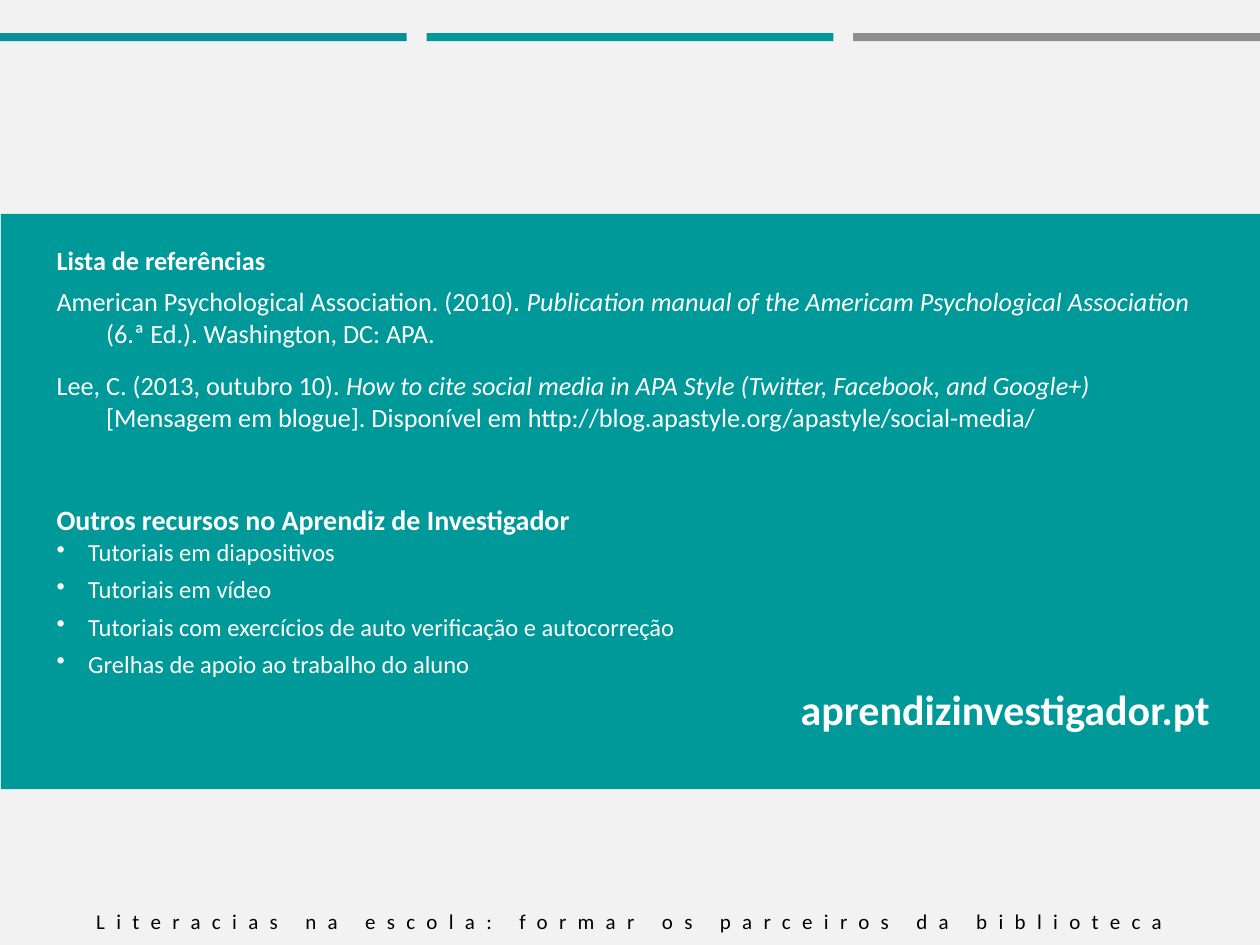
from dataclasses import dataclass

from lxml import etree
from pptx import Presentation
from pptx.dml.color import RGBColor
from pptx.enum.shapes import MSO_SHAPE
from pptx.enum.text import PP_ALIGN
from pptx.oxml.ns import qn
from pptx.util import Cm, Pt

RECTANGLE = MSO_SHAPE.RECTANGLE
CENTER, RIGHT = PP_ALIGN.CENTER, PP_ALIGN.RIGHT


@dataclass(frozen=True)
class Theme:
    """Colours, font and type sizes of the deck."""
    paper: str = "F2F2F2"
    teal: str = "009999"
    deep_teal: str = "089099"
    grey: str = "8E8E8E"
    white: str = "FFFFFF"
    black: str = "000000"
    font: str = "Calibri"
    footer: int = 12
    bullet: int = 14
    reference: int = 15
    heading: int = 16
    address: int = 24


THEME = Theme()
REFERENCES = [
    ("American Psychological Association. (2010). ",
     "Publication manual of the Americam Psychological Association",
     " (6.ª Ed.). Washington, DC: APA."),
    ("Lee, C. (2013, outubro 10). ",
     "How to cite social media in APA Style (Twitter, Facebook, and Google+) ",
     "[Mensagem em blogue]. Disponível em http://blog.apastyle.org/apastyle/social-media/"),
]
RESOURCES = [
    "Tutoriais em diapositivos",
    "Tutoriais em vídeo",
    "Tutoriais com exercícios de auto verificação e autocorreção",
    "Grelhas de apoio ao trabalho do aluno",
]


def apply_format(target, values):
    """Set each named attribute on the target."""
    for name, value in values.items():
        setattr(target, name, value)


def add_block(page, left, top, width, height, color):
    """Draw a plain filled rectangle, in centimetres."""
    block = page.shapes.add_shape(RECTANGLE, Cm(left), Cm(top), Cm(width), Cm(height))
    block.shadow.inherit = False
    block.fill.solid()
    block.fill.fore_color.rgb = RGBColor.from_string(color)
    block.line.fill.background()


def add_text_frame(page, left, top, width, height):
    """Add a wrapping text box and return its frame."""
    frame = page.shapes.add_textbox(Cm(left), Cm(top), Cm(width), Cm(height)).text_frame
    frame.word_wrap = True
    return frame


def add_para(frame, layout, hanging=0, bullet=None):
    """Return the next paragraph, with a hanging indent and bullet if asked."""
    first = frame.paragraphs[0]
    para = frame.add_paragraph() if first.runs else first
    properties = para._p.get_or_add_pPr()
    if hanging:
        properties.set("marL", str(Cm(hanging)))
        properties.set("indent", str(-Cm(hanging)))
    if bullet:
        etree.SubElement(properties, qn("a:buChar")).set("char", bullet)
    apply_format(para, layout)
    return para


def add_span(para, text, size, color=THEME.white, **style):
    """Append styled text to a paragraph."""
    span = para.add_run()
    span.text = text
    apply_format(span.font, {"name": THEME.font, "size": Pt(size), **style})
    span.font.color.rgb = RGBColor.from_string(color)
    return span


def add_top_bars(page, left, top, width, height):
    """Spread three equal bars across the box."""
    colors = (THEME.deep_teal, THEME.teal, THEME.grey)
    gap = 0.4
    bar = (width - gap * (len(colors) - 1)) / len(colors)
    for index, color in enumerate(colors):
        add_block(page, left + index * (bar + gap), top, bar, height, color)


def add_references(page, left, top, width, height):
    """Write the reference list with hanging indents."""
    frame = add_text_frame(page, left, top, width, height)
    heading = add_para(frame, {"line_spacing": 0.7})
    add_span(heading, "Lista de referências", THEME.reference, bold=True)
    for author, title, source in REFERENCES:
        para = add_para(frame, {"space_before": Pt(6), "space_after": Pt(6)}, hanging=1)
        add_span(para, author, THEME.reference)
        add_span(para, title, THEME.reference, italic=True)
        add_span(para, source, THEME.reference)


def add_resources(page, left, top, width, height):
    """Write the bulleted resources and the site address."""
    frame = add_text_frame(page, left, top, width, height)
    heading = add_para(frame, {"line_spacing": 0.8})
    add_span(heading, "Outros recursos no Aprendiz de Investigador", THEME.heading, bold=True)
    layout = {"line_spacing": 0.9, "space_before": Pt(3), "space_after": Pt(3)}
    for resource in RESOURCES:
        add_span(add_para(frame, layout, 0.64, "•"), resource, THEME.bullet)
    address = add_para(frame, {**layout, "alignment": RIGHT})
    add_span(address, "aprendizinvestigador.pt", THEME.address, bold=True)


def add_panel(page, left, top, width, height):
    """Fill the panel and stack its two text regions."""
    add_block(page, left, top, width, height, THEME.teal)
    text_left, text_width, text_height = left + 0.87, 23.75, 5.16
    for index, add_region in enumerate((add_references, add_resources)):
        add_region(page, text_left, top + 0.66 + index * text_height, text_width, text_height)


def add_footer(page, left, top, width, height):
    """Write the widely spaced footer line."""
    para = add_para(add_text_frame(page, left, top, width, height), {"alignment": CENTER})
    span = add_span(para, "Literacias na escola: formar os parceiros da biblioteca",
                    THEME.footer, THEME.black)
    span._r.get_or_add_rPr().set("spc", "650")


def main():
    """Build and save the deck."""
    deck = Presentation()
    apply_format(deck, {"slide_width": Cm(25.4), "slide_height": Cm(19.05)})
    page = deck.slides.add_slide(deck.slide_layouts[6])
    page.background.fill.solid()
    page.background.fill.fore_color.rgb = RGBColor.from_string(THEME.paper)
    add_top_bars(page, 0, 0.67, 25.4, 0.16)
    add_panel(page, 0.02, 4.31, 25.38, 11.6)
    add_footer(page, 0, 18.19, 25.4, 0.77)
    deck.save("out.pptx")


if __name__ == "__main__":
    main()
